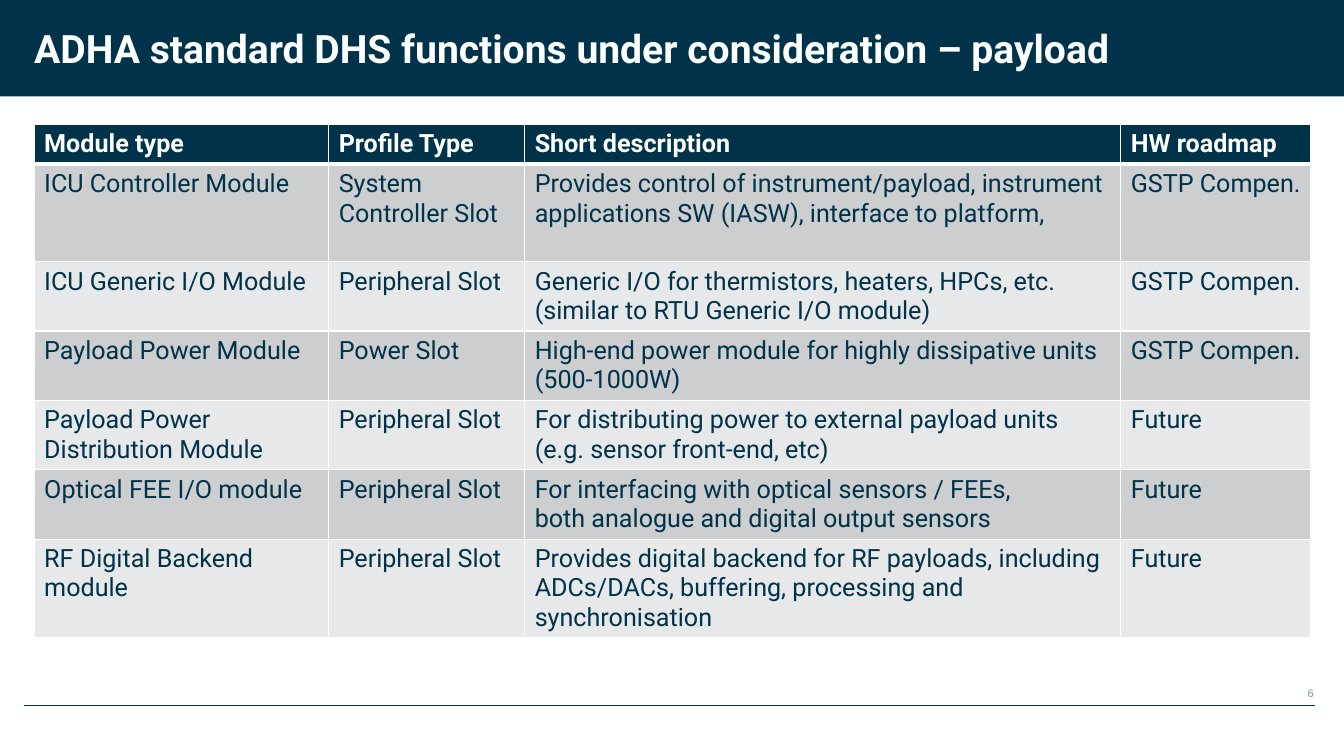
from lxml import etree
from pptx import Presentation
from pptx import util as u
from pptx.dml import color
from pptx.enum import shapes, text
from pptx.oxml import ns

HUES = {"navy": "003249", "white": "FEFFFF", "dark": "CCCED0",
        "light": "E7E8E9", "slate": "8197A6"}
COLS = [2.93, 1.95, 5.93, 1.89]
TALL = [0.39, 0.97, 0.69, 0.69, 0.69, 0.69, 0.98]
ROWS = [
    ["Module type", "Profile Type", "Short description", "HW roadmap"],
    ["ICU Controller Module", "System Controller Slot",
     "Provides control of instrument/payload, instrument applications SW (IASW), "
     "interface to platform,", "GSTP Compen."],
    ["ICU Generic I/O Module", "Peripheral Slot",
     "Generic I/O for thermistors, heaters, HPCs, etc.\n"
     "(similar to RTU Generic I/O module)", "GSTP Compen."],
    ["Payload Power Module", "Power Slot",
     "High-end power module for highly dissipative units\n(500-1000W)",
     "GSTP Compen."],
    ["Payload Power Distribution Module", "Peripheral Slot",
     "For distributing power to external payload units (e.g. sensor front-end, etc)",
     "Future"],
    ["Optical FEE I/O module", "Peripheral Slot",
     "For interfacing with optical sensors / FEEs,\n"
     "both analogue and digital output sensors", "Future"],
    ["RF Digital Backend module", "Peripheral Slot",
     "Provides digital backend for RF payloads, including ADCs/DACs, buffering, "
     "processing and synchronisation", "Future"],
]


def hue(name):
    return color.RGBColor.from_string(HUES[name])


def box(*sides):
    return [u.Inches(side) for side in sides]


def place(shape, *sides):
    shape.left, shape.top, shape.width, shape.height = box(*sides)


def write(para, words, size, tint, bold=False, face="Roboto"):
    for i, line in enumerate(words.split("\n")):
        if i:
            para.add_line_break()
        run = para.add_run()
        run.text = line
        font = run.font
        font.size, font.name, font.bold = u.Pt(size), face, bold
        font.color.rgb = hue(tint)


def add_bar(slide):
    bar = slide.shapes.add_shape(shapes.MSO_SHAPE.RECTANGLE, *box(0, 0, 13.37, 0.96))
    bar.shadow.inherit = False
    bar.fill.solid()
    bar.fill.fore_color.rgb = hue("navy")
    bar.line.fill.background()


def add_title(slide, words):
    title = slide.shapes.title
    place(title, 0.24, 0.19, 11.24, 0.57)
    slide.shapes._spTree.append(title._element)
    frame = title.text_frame
    frame.vertical_anchor = text.MSO_ANCHOR.MIDDLE
    frame.auto_size = text.MSO_AUTO_SIZE.NONE
    frame.word_wrap = True
    para = frame.paragraphs[0]
    para.alignment = text.PP_ALIGN.LEFT
    write(para, words, 28, "white", True)


def add_rule(slide):
    rule = slide.shapes.add_connector(
        shapes.MSO_CONNECTOR.STRAIGHT, *box(0.24, 7.02, 13.08, 7.02))
    rule.line.color.rgb = hue("navy")
    rule.line.width = u.Pt(0.75)
    etree.SubElement(rule._element.spPr, ns.qn("a:effectLst"))


def add_page(slide, words):
    page = slide.shapes.add_textbox(*box(8.97, 6.78, 4.1, 0.24))
    frame = page.text_frame
    frame.margin_right = 0
    frame.word_wrap = True
    para = frame.paragraphs[0]
    para.alignment = text.PP_ALIGN.RIGHT
    write(para, words, 8, "slate", face="Arial")


def edge(cell, side, width):
    line = etree.SubElement(cell._tc.get_or_add_tcPr(), ns.qn("a:ln" + side),
                            w=str(u.Pt(width)))
    fill = etree.SubElement(line, ns.qn("a:solidFill"))
    etree.SubElement(fill, ns.qn("a:srgbClr"), val=HUES["white"])


def fill_cell(cell, words, row):
    head = row == 0
    widths = {"L": 1, "R": 1, "T": 3 if row == 1 else 1, "B": 3 if head else 1}
    for side, width in widths.items():
        edge(cell, side, width)
    cell.fill.solid()
    cell.fill.fore_color.rgb = hue("navy" if head else "dark" if row % 2 else "light")
    write(cell.text_frame.paragraphs[0], words, 18, "white" if head else "navy", head)


def add_grid(slide):
    grid = slide.shapes.add_table(
        len(ROWS), len(COLS), *box(0.34, 1.24, sum(COLS), sum(TALL))).table
    for col, width in zip(grid.columns, COLS):
        col.width = u.Inches(width)
    for r, (words, height) in enumerate(zip(ROWS, TALL)):
        grid.rows[r].height = u.Inches(height)
        for c, word in enumerate(words):
            fill_cell(grid.cell(r, c), word, r)


def main():
    deck = Presentation()
    deck.slide_width, deck.slide_height = box(13.37, 7.5)
    slide = deck.slides.add_slide(deck.slide_layouts[5])
    back = slide.background.fill
    back.solid()
    back.fore_color.rgb = hue("white")
    add_page(slide, "6")
    add_bar(slide)
    add_rule(slide)
    add_title(slide, "ADHA standard DHS functions under consideration – payload")
    add_grid(slide)
    deck.save("out.pptx")


if __name__ == "__main__":
    main()
